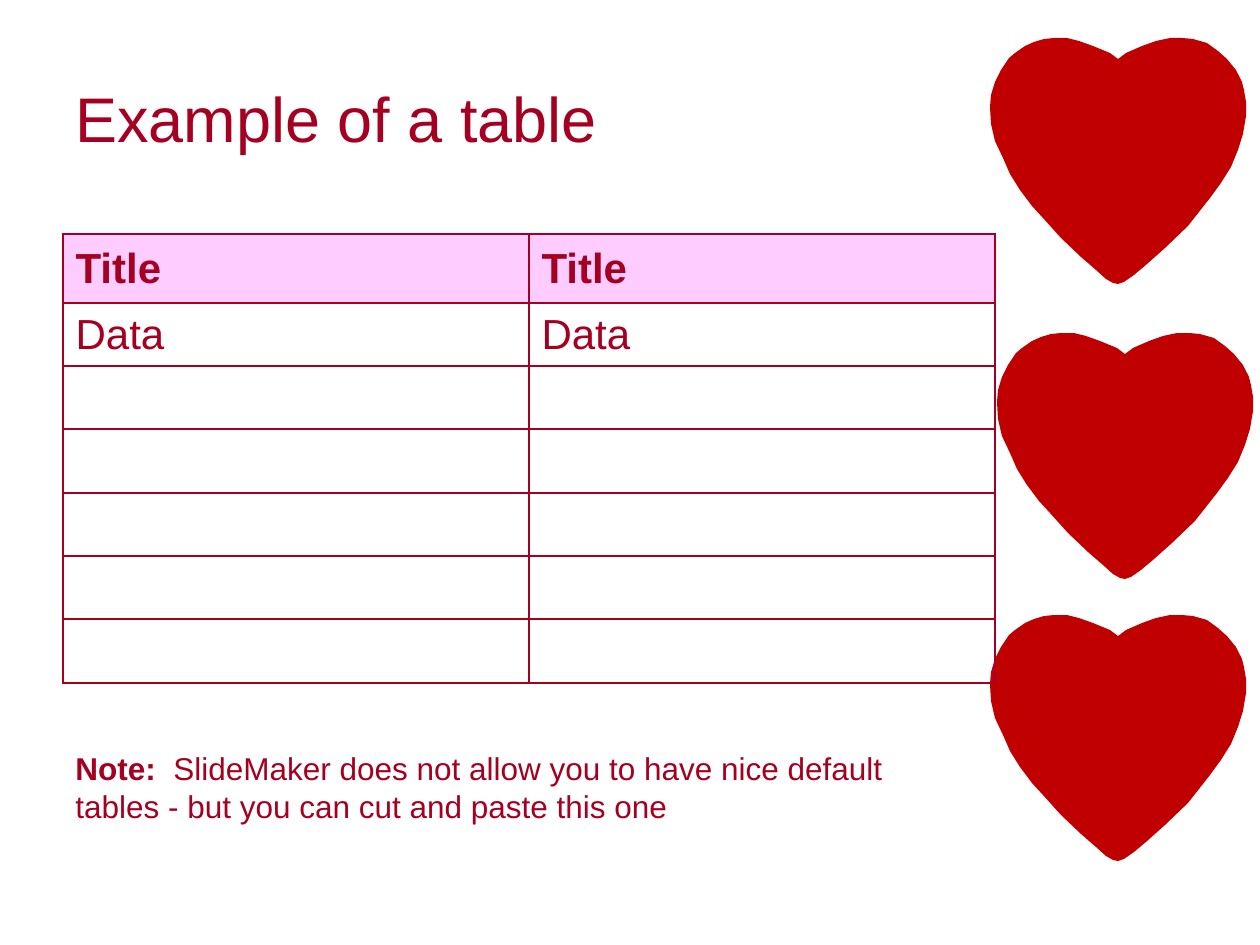
from dataclasses import dataclass

from lxml import etree
from pptx import Presentation
from pptx.dml.color import RGBColor
from pptx.enum.text import MSO_ANCHOR
from pptx.oxml.ns import qn
from pptx.util import Emu, Pt

MIDDLE = MSO_ANCHOR.MIDDLE
TOP = MSO_ANCHOR.TOP

PX = 914400 / 126
CRIMSON = RGBColor(0xA5, 0x00, 0x21)
HEART_RED = RGBColor(0xC0, 0x00, 0x00)
PINK = RGBColor(0xFF, 0xCC, 0xFF)
FONT = "Arial"


@dataclass(frozen=True)
class Box:
    left: int
    top: int
    width: int
    height: int

    def emu(self) -> tuple[Emu, ...]:
        return tuple(emu(v) for v in (self.left, self.top, self.width, self.height))


@dataclass(frozen=True)
class Heart:
    left: int
    top: int


HEARTS = [Heart(990, 38), Heart(997, 333), Heart(990, 615)]
HEART_OUTLINE = [
    (252, 44), (246, 32), (237, 21), (228, 13), (217, 5), (203, 1), (192, 0),
    (180, 0), (166, 3), (152, 8), (136, 15), (128, 21), (120, 15), (103, 8),
    (89, 3), (77, 0), (64, 0), (54, 1), (44, 4), (35, 8), (25, 15), (19, 20),
    (11, 32), (5, 44), (1, 57), (0, 69), (1, 86), (5, 103), (13, 120),
    (20, 136), (30, 152), (42, 168), (53, 180), (71, 200), (91, 219),
    (106, 232), (116, 241), (123, 245), (128, 246), (134, 244), (144, 237),
    (156, 227), (175, 210), (198, 188), (209, 174), (220, 160), (231, 145),
    (241, 129), (248, 112), (253, 96), (256, 78), (256, 64), (254, 52),
]

TITLE_BOX = Box(63, 38, 1134, 158)
NOTE_BOX = Box(63, 743, 866, 90)
TABLE_BOX = Box(63, 234, 932, 449)
ROW_HEIGHTS = [69] + [63, 63, 64] * 2
TABLE_TEXT = [("Title", "Title"), ("Data", "Data")]


def emu(px: int) -> Emu:
    return Emu(round(px * PX))


def add_span(para, text: str, *, size: int, bold: bool = False) -> None:
    span = para.add_run()
    span.text = text
    span.font.name = FONT
    span.font.size = Pt(size)
    span.font.bold = bold
    span.font.color.rgb = CRIMSON


def add_text_box(slide, box: Box, *, anchor):
    frame = slide.shapes.add_textbox(*box.emu()).text_frame
    frame.word_wrap = True
    frame.vertical_anchor = anchor
    return frame.paragraphs[0]


def add_heart(slide, heart: Heart) -> None:
    first, *rest = HEART_OUTLINE
    builder = slide.shapes.build_freeform(*first, scale=PX)
    builder.add_line_segments(rest, close=True)
    shape = builder.convert_to_shape(emu(heart.left), emu(heart.top))
    shape.shadow.inherit = False
    shape.fill.solid()
    shape.fill.fore_color.rgb = HEART_RED
    shape.line.fill.background()


def add_borders(cell) -> None:
    properties = cell._tc.get_or_add_tcPr()
    for index, side in enumerate(("lnL", "lnR", "lnT", "lnB")):
        line = etree.Element(qn(f"a:{side}"), w=str(Pt(1)))
        fill = etree.SubElement(line, qn("a:solidFill"))
        etree.SubElement(fill, qn("a:srgbClr"), val=str(CRIMSON))
        properties.insert(index, line)


def add_data_table(slide) -> None:
    frame = slide.shapes.add_table(len(ROW_HEIGHTS), 2, *TABLE_BOX.emu())
    table = frame.table
    table.first_row = False
    table.horz_banding = False
    for column in table.columns:
        column.width = emu(TABLE_BOX.width // 2)
    for row, height in zip(table.rows, ROW_HEIGHTS):
        row.height = emu(height)
    for cell in table.iter_cells():
        cell.fill.background()
        cell.vertical_anchor = MIDDLE
        add_borders(cell)
    for row_index, texts in enumerate(TABLE_TEXT):
        is_header = row_index == 0
        for column_index, text in enumerate(texts):
            cell = table.cell(row_index, column_index)
            add_span(cell.text_frame.paragraphs[0], text, size=24, bold=is_header)
            if is_header:
                cell.fill.solid()
                cell.fill.fore_color.rgb = PINK


def main() -> None:
    deck = Presentation()
    deck.slide_width = emu(1260)
    deck.slide_height = emu(945)
    page = deck.slides.add_slide(deck.slide_layouts[6])

    # Hearts down the right edge
    for heart in HEARTS:
        add_heart(page, heart)

    # Title
    title = add_text_box(page, TITLE_BOX, anchor=MIDDLE)
    add_span(title, "Example of a table", size=36)

    # Table
    add_data_table(page)

    # Note
    note = add_text_box(page, NOTE_BOX, anchor=TOP)
    add_span(note, "Note:  ", size=18, bold=True)
    add_span(
        note,
        "SlideMaker does not allow you to have nice default "
        "tables - but you can cut and paste this one",
        size=18,
    )

    deck.save("out.pptx")


if __name__ == "__main__":
    main()
